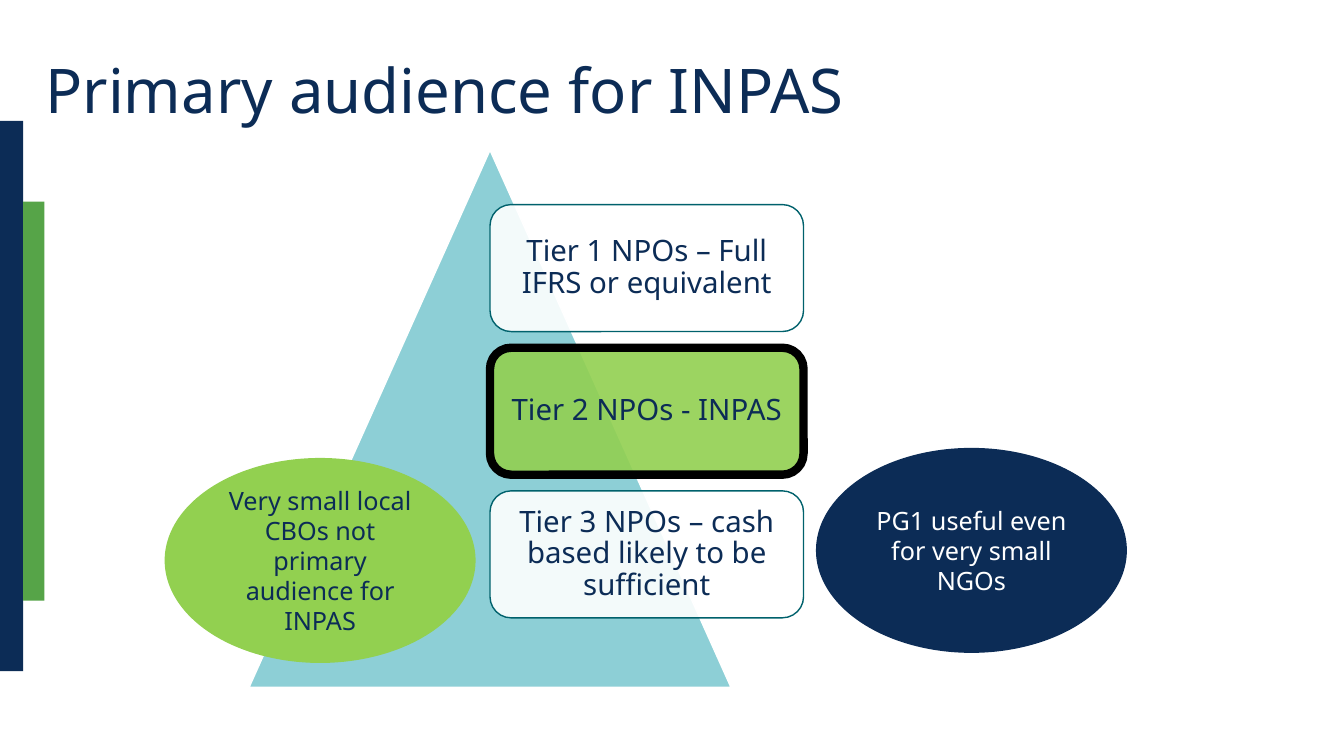
import pptx
import pptx.util
import pptx.dml.color
import pptx.enum.shapes
import pptx.enum.text
import pptx.oxml
import pptx.oxml.ns
import lxml.etree

Inches = pptx.util.Inches
Pt = pptx.util.Pt
SHAPES = pptx.enum.shapes.MSO_SHAPE
ALIGN = pptx.enum.text.PP_ALIGN

COLORS = {
    "navy": "0C2C56",
    "green": "56A448",
    "lime": "92D050",
    "aqua": "8DCFD6",
    "teal": "00616C",
    "white": "FFFFFF",
    "black": "000000",
}
FONT = "Noto Sans"


def rgb(name):
    return pptx.dml.color.RGBColor.from_string(COLORS[name])


def write_text(shape, text, size=18, color="navy", align=ALIGN.CENTER,
               spacing=1.0, inset=None):
    frame = shape.text_frame
    frame.word_wrap = True
    frame.auto_size = pptx.enum.text.MSO_AUTO_SIZE.NONE
    frame.vertical_anchor = pptx.enum.text.MSO_ANCHOR.MIDDLE
    if inset is not None:
        frame.margin_left = frame.margin_right = Inches(inset)
        frame.margin_top = frame.margin_bottom = Inches(inset)
    frame.text = text
    paragraph = frame.paragraphs[0]
    paragraph.alignment = align
    paragraph.line_spacing = spacing
    font = paragraph.runs[0].font
    font.name = FONT
    font.size = Pt(size)
    font.color.rgb = rgb(color)


class AudienceSlide:
    def __init__(self, deck):
        self.slide = deck.slides.add_slide(deck.slide_layouts[5])

    def title(self, text, left, top, width, height):
        heading = self.slide.shapes.title
        heading.left, heading.top = Inches(left), Inches(top)
        heading.width, heading.height = Inches(width), Inches(height)
        write_text(heading, text, size=44, align=ALIGN.LEFT, spacing=0.9)

    def shape(self, kind, left, top, width, height, fill, line=None,
              line_width=1, opacity=100):
        """Add a preset shape; opacity is the fill's, in percent."""
        shape = self.slide.shapes.add_shape(
            kind, Inches(left), Inches(top), Inches(width), Inches(height))
        shape.shadow.inherit = False
        shape.fill.solid()
        shape.fill.fore_color.rgb = rgb(fill)
        if opacity < 100:
            qn = pptx.oxml.ns.qn
            color = shape.fill._xPr.find(qn("a:solidFill")).find(qn("a:srgbClr"))
            lxml.etree.SubElement(color, qn("a:alpha"), val=str(opacity * 1000))
        if line:
            shape.line.color.rgb = rgb(line)
            shape.line.width = Pt(line_width)
        else:
            shape.line.fill.background()
        return shape

    def tier(self, text, top, fill, line, line_width):
        box = self.shape(SHAPES.ROUNDED_RECTANGLE, 4.86, top, 3.11, 1.26,
                         fill, line, line_width, opacity=90)
        write_text(box, text, size=21, spacing=0.9, inset=0.09)

    def callout(self, text, left, top, fill, color):
        oval = self.shape(SHAPES.OVAL, left, top, 3.07, 2.02, fill, fill)
        write_text(oval, text, color=color)


def main():
    deck = pptx.Presentation()
    deck.slide_width, deck.slide_height = Inches(13.33), Inches(7.5)
    page = AudienceSlide(deck)

    page.shape(SHAPES.RECTANGLE, 0, 1.2, 0.23, 5.46, "navy")
    page.shape(SHAPES.RECTANGLE, 0.23, 2, 0.21, 3.96, "green")
    page.title("Primary audience for INPAS", 0.35, 0.2, 11.5, 1.45)

    page.shape(SHAPES.ISOSCELES_TRIANGLE, 2.47, 1.49, 4.78, 5.33,
               "aqua", "white")
    tiers = [
        ("Tier 1 NPOs – Full IFRS or equivalent", "white", "teal", 1),
        ("Tier 2 NPOs - INPAS", "lime", "black", 6),
        ("Tier 3 NPOs – cash based likely to be sufficient", "white", "teal", 1),
    ]
    for index, (text, fill, line, line_width) in enumerate(tiers):
        page.tier(text, 2.03 + 1.42 * index, fill, line, line_width)

    page.callout("Very small local CBOs not primary audience for INPAS",
                 1.64, 4.55, "lime", "navy")
    page.callout("PG1 useful even for very small NGOs",
                 8.1, 4.45, "navy", "white")
    deck.save("out.pptx")


if __name__ == "__main__":
    main()
